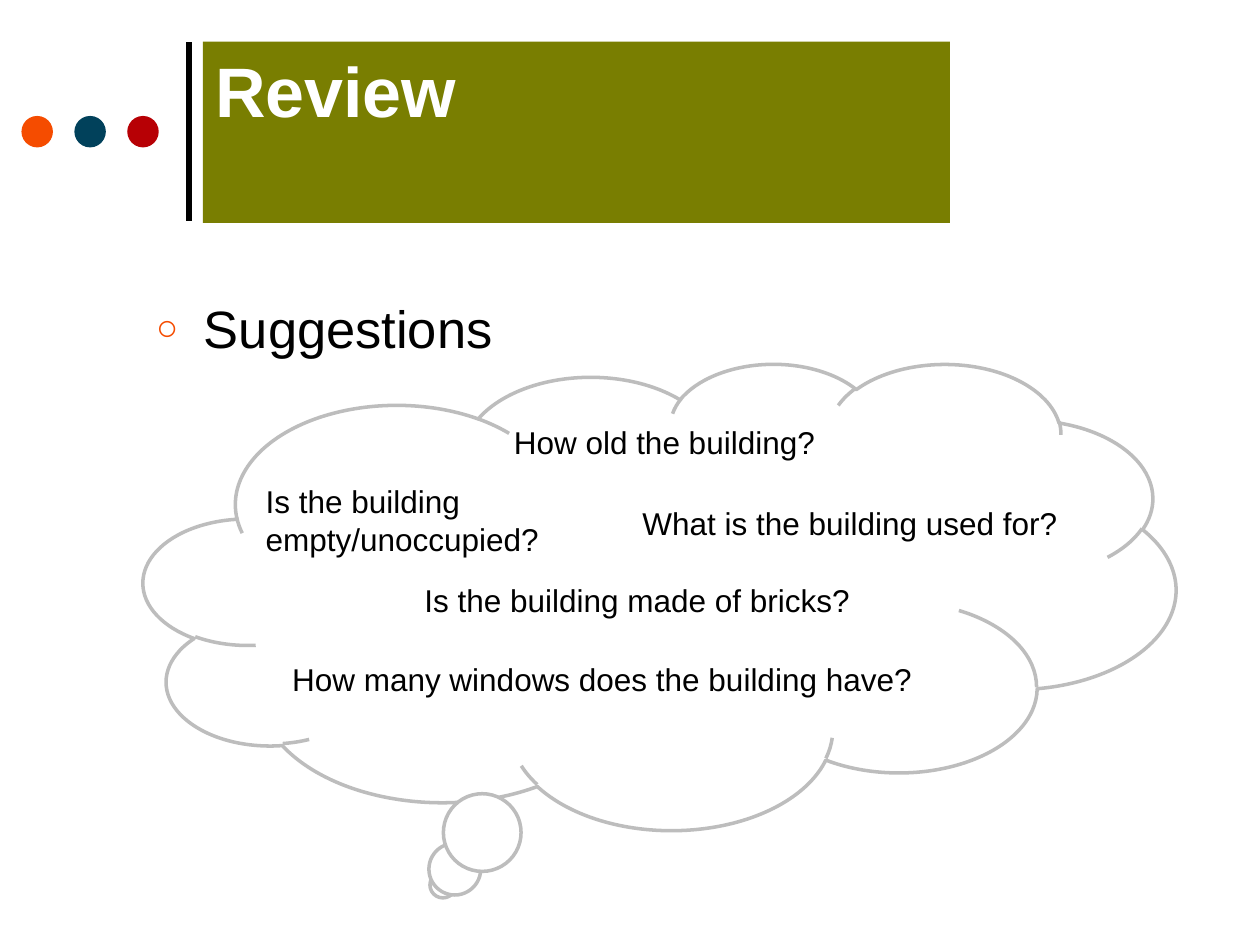
from lxml import etree
from pptx import Presentation
from pptx.dml.color import RGBColor
from pptx.enum.shapes import MSO_CONNECTOR, MSO_SHAPE
from pptx.enum.text import MSO_ANCHOR, PP_ALIGN
from pptx.oxml.ns import qn
from pptx.util import Inches, Pt

STRAIGHT = MSO_CONNECTOR.STRAIGHT
OVAL, RECTANGLE, CLOUD = MSO_SHAPE.OVAL, MSO_SHAPE.RECTANGLE, MSO_SHAPE.CLOUD_CALLOUT
TOP, LEFT = MSO_ANCHOR.TOP, PP_ALIGN.LEFT

FONT = "Arial"
BLACK, WHITE, OLIVE, GRAY, ORANGE = "000000", "FFFFFF", "797E01", "BDBDBD", "F54C00"
TITLE = "Review"
HEADING = "Suggestions"
DOT_COLORS = [ORANGE, "01415B", "B70005"]
DOT_LEFT, DOT_TOP, DOT_SIZE, DOT_STEP = 0.17, 0.92, 0.25, 0.42
BODY_LEFT = 1.14
QUESTIONS = [
    ("How old the building?", 3.98, 3.31, 2.83, 0.4),
    ("Is the building made of bricks?", 3.27, 4.56, 3.94, 0.4),
    ("How many windows does the building have?", 2.22, 5.19, 5.46, 0.4),
    ("What is the building used for?", 5, 3.95, 3.94, 0.4),
    ("Is the building empty/unoccupied?", 2.01, 3.78, 3.94, 0.71),
]


def rgb(color):
    return RGBColor.from_string(color)


def add_shape(slide, kind, box, fill, outline=None):
    shape = slide.shapes.add_shape(kind, *map(Inches, box))
    shape.shadow.inherit = False
    shape.fill.solid()
    shape.fill.fore_color.rgb = rgb(fill)
    if outline:
        shape.line.color.rgb = rgb(outline)
        shape.line.width = Pt(2)
    else:
        shape.line.fill.background()
    return shape


def write(shape, text, size, color=BLACK, bold=False):
    frame = shape.text_frame
    frame.word_wrap = True
    frame.vertical_anchor = TOP
    paragraph = frame.paragraphs[0]
    paragraph.text = text
    paragraph.alignment = LEFT
    font = paragraph.font
    font.name, font.size, font.bold = FONT, Pt(size), bold
    font.color.rgb = rgb(color)


def add_text(slide, box, text, size):
    text_box = slide.shapes.add_textbox(*map(Inches, box))
    write(text_box, text, size)
    return text_box


def add_bullet(paragraph, char, color, percent, indent):
    props = paragraph._p.get_or_add_pPr()
    props.set("marL", str(Inches(indent)))
    props.set("indent", str(-Inches(indent)))
    bullet_color = etree.Element(qn("a:buClr"))
    etree.SubElement(bullet_color, qn("a:srgbClr"), val=color)
    parts = [
        bullet_color,
        etree.Element(qn("a:buSzPct"), val=str(percent * 1000)),
        etree.Element(qn("a:buFont"), typeface=FONT),
        etree.Element(qn("a:buChar"), char=char),
    ]
    for position, part in enumerate(parts):
        props.insert(position, part)


def main():
    deck = Presentation()
    deck.slide_width, deck.slide_height = Inches(10), Inches(7.5)
    slide = deck.slides.add_slide(deck.slide_layouts[6])

    rule = slide.shapes.add_connector(
        STRAIGHT, Inches(1.5), Inches(1.75), Inches(1.5), Inches(0.33))
    rule.line.color.rgb = rgb(BLACK)
    rule.line.width = Pt(3)
    etree.SubElement(rule._element.spPr, qn("a:effectLst"))

    for column, color in enumerate(DOT_COLORS):
        left = DOT_LEFT + column * DOT_STEP
        add_shape(slide, OVAL, (left, DOT_TOP, DOT_SIZE, DOT_SIZE), color)

    heading = add_text(slide, (BODY_LEFT, 2.25, 8.5, 4.33), HEADING, 30)
    heading.text_frame.margin_top = Inches(0.1)
    add_bullet(heading.text_frame.paragraphs[0], "○", ORANGE, 70, 0.38)

    banner = add_shape(slide, RECTANGLE, (1.61, 0.33, 5.93, 1.44), OLIVE)
    write(banner, TITLE, 40, WHITE, bold=True)

    cloud = add_shape(slide, CLOUD, (BODY_LEFT, 2.88, 8.19, 3.7), WHITE, GRAY)
    cloud.adjustments[0] = -0.21
    cloud.adjustments[1] = 0.62

    for question, *box in QUESTIONS:
        add_text(slide, box, question, 18)

    deck.save("out.pptx")


if __name__ == "__main__":
    main()
